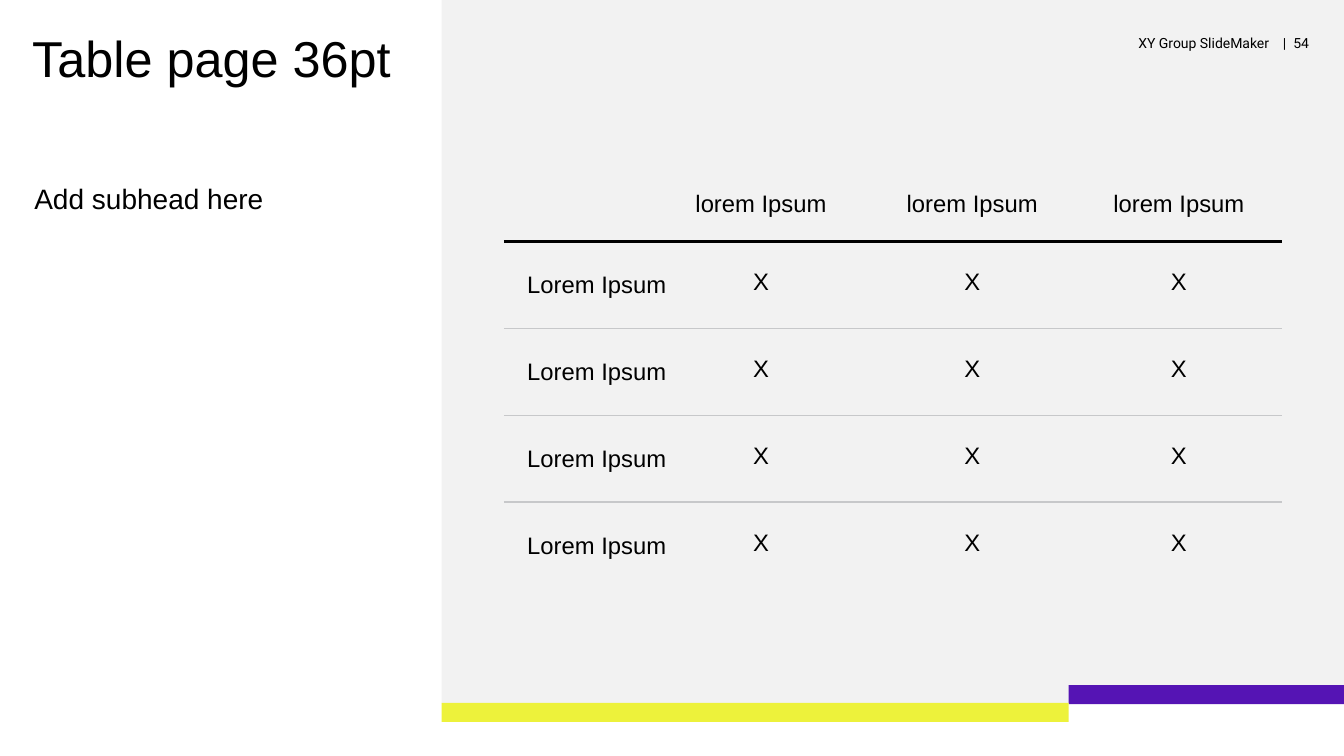
from dataclasses import dataclass

import pptx
import pptx.dml.color
import pptx.enum.shapes
import pptx.enum.text
import pptx.oxml
import pptx.oxml.ns
import pptx.util

Pt = pptx.util.Pt
Align = pptx.enum.text.PP_ALIGN
Anchor = pptx.enum.text.MSO_ANCHOR

BLACK = "000000"
RULE_GREY = "C7C8CA"


@dataclass
class Band:
    left: float
    top: float
    width: float
    height: float
    fill: str


@dataclass
class Label:
    text: str
    left: float
    top: float
    width: float
    height: float
    size: float
    font: str = "Arial"
    align: Align = Align.LEFT
    line_spacing: float = 1.0


BANDS = [
    Band(315.4, 0, 644.6, 502.5, "F2F2F2"),
    Band(763.3, 489.3, 196.7, 13.7, "5514B4"),
    Band(315.4, 502, 447.9, 13.7, "EDF23B"),
]
LABELS = [
    Label("Table page 36pt", 23, 24.5, 266.4, 105, 36, line_spacing=0.9),
    Label("Add subhead here", 24.5, 129.6, 265, 64.8, 20),
    Label("XY Group SlideMaker", 707, 24.5, 199.5, 15.8, 10, "Roboto", Align.RIGHT),
    Label("|", 908.7, 24.5, 10, 15.8, 10, "Roboto", Align.RIGHT),
    Label("54", 923.8, 24.5, 28.8, 15.8, 10, "Roboto"),
]

TABLE_LEFT, TABLE_TOP = 360, 119.3
COLUMN_WIDTHS = [128.2, 132.5, 147.6, 147.6]
HEADER_HEIGHT, ROW_HEIGHT = 53.3, 62.1
TABLE_SIZE = 17
TABLE_ROWS = [
    ["", *["lorem Ipsum"] * 3],
    *[["Lorem Ipsum", *["X"] * 3] for _ in range(4)],
]


def color(value: str) -> pptx.dml.color.RGBColor:
    return pptx.dml.color.RGBColor.from_string(value)


def style_paragraph(para, size: float, font: str, align: Align) -> None:
    para.alignment = align
    para.font.size = Pt(size)
    para.font.name = font
    para.font.color.rgb = color(BLACK)


def add_band(page, band: Band) -> None:
    box = page.shapes.add_shape(
        pptx.enum.shapes.MSO_SHAPE.RECTANGLE,
        Pt(band.left), Pt(band.top), Pt(band.width), Pt(band.height))
    box.shadow.inherit = False
    box.fill.solid()
    box.fill.fore_color.rgb = color(band.fill)
    box.line.fill.background()


def add_label(page, label: Label) -> None:
    box = page.shapes.add_textbox(
        Pt(label.left), Pt(label.top), Pt(label.width), Pt(label.height))
    frame = box.text_frame
    frame.word_wrap = True
    frame.margin_left = frame.margin_right = frame.margin_top = frame.margin_bottom = 0
    frame.text = label.text
    para = frame.paragraphs[0]
    para.line_spacing = label.line_spacing
    style_paragraph(para, label.size, label.font, label.align)


def set_border(cell, side: str, rule: tuple[str, float] | None) -> None:
    """Draw one cell side (L, R, T or B), or hide it when there is no rule."""
    namespace = pptx.oxml.ns.nsdecls("a")
    if rule is None:
        xml = f'<a:ln{side} {namespace} w="0"><a:noFill/></a:ln{side}>'
    else:
        line_color, width = rule
        xml = (f'<a:ln{side} {namespace} w="{Pt(width)}"><a:solidFill>'
               f'<a:srgbClr val="{line_color}"/></a:solidFill></a:ln{side}>')
    cell._tc.get_or_add_tcPr().append(pptx.oxml.parse_xml(xml))


def fill_cell(cell, text: str, row: int, column: int) -> None:
    cell.margin_left = cell.margin_right = cell.margin_top = cell.margin_bottom = 0
    cell.vertical_anchor = Anchor.MIDDLE
    if column == 0:
        cell.margin_left = Pt(16.6)
    elif column == 1:
        cell.margin_right = Pt(21.6)
    if row and column:
        cell.vertical_anchor = Anchor.TOP
        cell.margin_top = Pt(19.6)
    cell.text = text
    style_paragraph(cell.text_frame.paragraphs[0], TABLE_SIZE, "Arial",
                    Align.CENTER if column else Align.LEFT)


def add_comparison_table(page) -> None:
    row_count = len(TABLE_ROWS)
    frame = page.shapes.add_table(
        row_count, len(COLUMN_WIDTHS), Pt(TABLE_LEFT), Pt(TABLE_TOP),
        Pt(sum(COLUMN_WIDTHS)), Pt(HEADER_HEIGHT + ROW_HEIGHT * (row_count - 1)))
    table = frame.table
    table.first_row = table.horz_banding = False
    for column, width in zip(table.columns, COLUMN_WIDTHS):
        column.width = Pt(width)
    rules = [None, (BLACK, 3), *[(RULE_GREY, 1.5)] * (row_count - 2), None]
    for row, texts in enumerate(TABLE_ROWS):
        table.rows[row].height = Pt(ROW_HEIGHT if row else HEADER_HEIGHT)
        for column, text in enumerate(texts):
            cell = table.cell(row, column)
            fill_cell(cell, text, row, column)
            borders = {"L": None, "R": None, "T": rules[row], "B": rules[row + 1]}
            for side, rule in borders.items():
                set_border(cell, side, rule)
            cell.fill.background()


def main() -> None:
    deck = pptx.Presentation()
    deck.slide_width, deck.slide_height = Pt(960), Pt(540)
    page = deck.slides.add_slide(deck.slide_layouts[6])
    for band in BANDS:
        add_band(page, band)
    for label in LABELS:
        add_label(page, label)
    add_comparison_table(page)
    deck.save("out.pptx")


if __name__ == "__main__":
    main()
